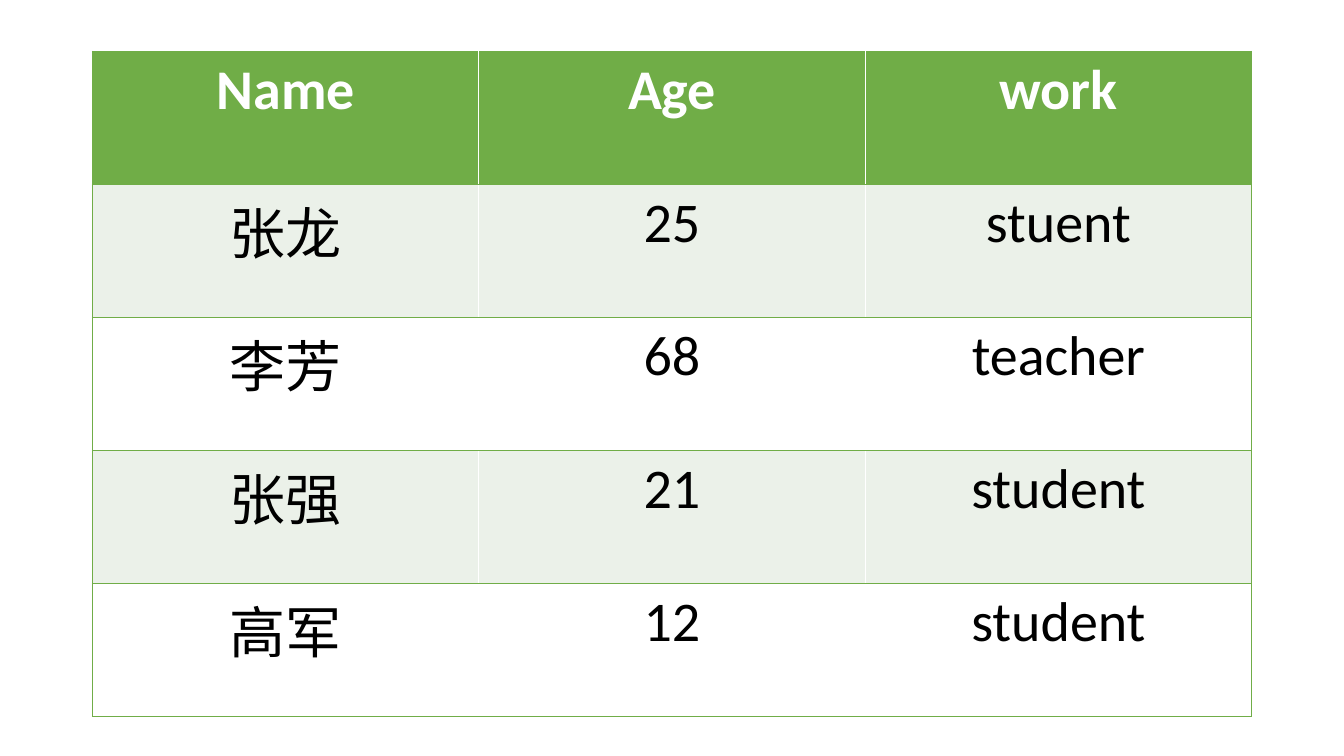
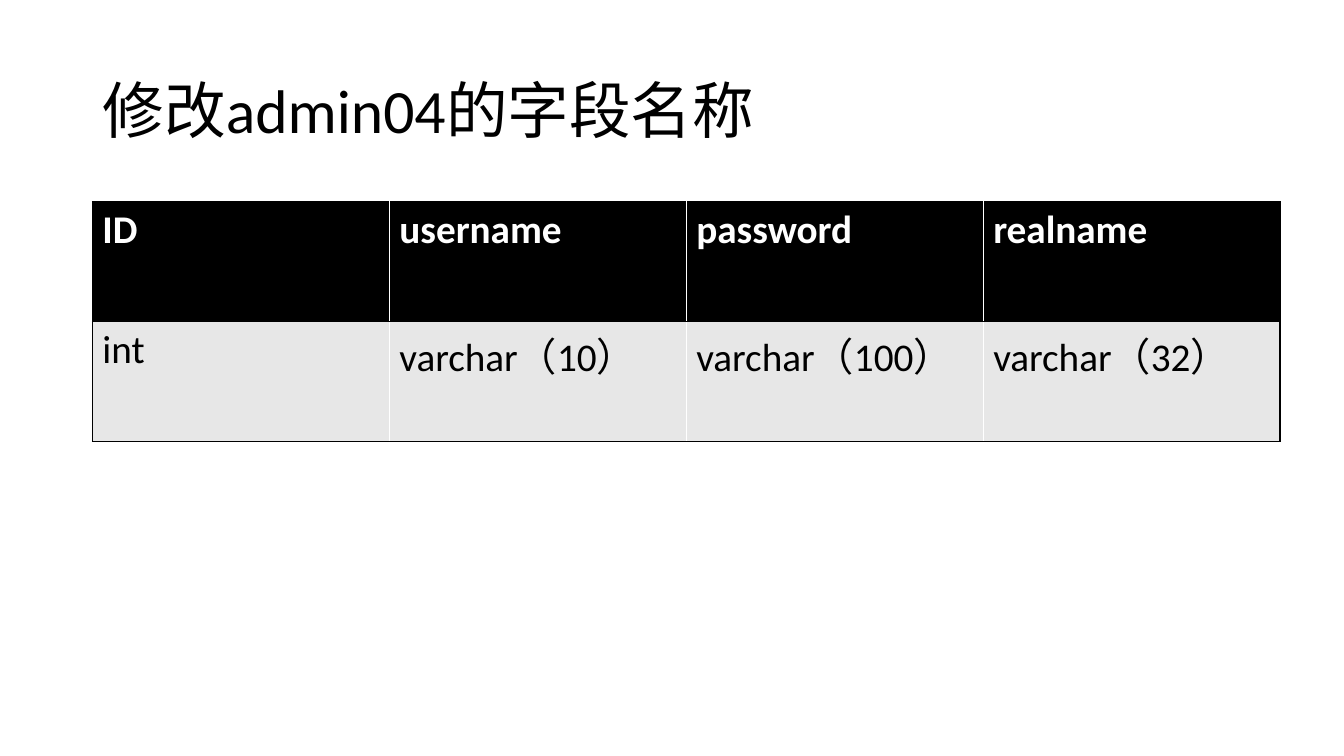
"""Build two slides: a table of people and a table of database fields."""
from lxml.etree import SubElement
from pptx import Presentation
from pptx.dml.color import RGBColor
from pptx.enum.text import MSO_ANCHOR, MSO_AUTO_SIZE, PP_ALIGN
from pptx.oxml.ns import qn
from pptx.util import Inches, Pt

GREEN = RGBColor(0x70, 0xAD, 0x47)
PALE_GREEN = RGBColor(0xEB, 0xF1, 0xE9)
BLACK = RGBColor(0x00, 0x00, 0x00)
GREY = RGBColor(0xE7, 0xE7, 0xE7)
WHITE = RGBColor(0xFF, 0xFF, 0xFF)
FONT = "Calibri"

presentation = Presentation()
presentation.slide_width = Inches(13.33)
presentation.slide_height = Inches(7.5)
COLUMN = presentation.slide_width / 160
ROW = presentation.slide_height / 75
LEFT = int(11 * COLUMN)
CONTENT_WIDTH = int(138 * COLUMN)


def format_text(paragraph, size, color, alignment, bold=False):
    paragraph.alignment = alignment
    for run in paragraph.runs:
        run.font.name = FONT
        run.font.size = Pt(size)
        run.font.bold = bold
        run.font.color.rgb = color


def add_grid(slide, records, top, width, row_height, size, alignment, accent, band):
    row_count, column_count = len(records), len(records[0])
    shape = slide.shapes.add_table(
        row_count, column_count, LEFT, int(top), int(width), int(row_height * row_count))
    for row_index, record in enumerate(records):
        is_header = row_index == 0
        fill_color = accent if is_header else band if row_index % 2 else WHITE
        for column_index, text in enumerate(record):
            cell = shape.table.cell(row_index, column_index)
            cell.text_frame.text = text
            format_text(cell.text_frame.paragraphs[0], size,
                        WHITE if is_header else BLACK, alignment, is_header)
            sides = ["a:lnT", "a:lnB"]
            if column_index == column_count - 1:
                sides.insert(0, "a:lnR")
            if column_index == 0:
                sides.insert(0, "a:lnL")
            properties = cell._tc.get_or_add_tcPr()
            for side in sides:
                line = SubElement(properties, qn(side), w=str(Pt(1)))
                line_fill = SubElement(line, qn("a:solidFill"))
                SubElement(line_fill, qn("a:srgbClr"), val=str(accent))
            cell.fill.solid()
            cell.fill.fore_color.rgb = fill_color


people = [
    ("Name", "Age", "work"),
    ("张龙", "25", "stuent"),
    ("李芳", "68", "teacher"),
    ("张强", "21", "student"),
    ("高军", "12", "student"),
]
people_slide = presentation.slides.add_slide(presentation.slide_layouts[6])
add_grid(people_slide, people, 5.1 * ROW, CONTENT_WIDTH, 13.2 * ROW,
         40, PP_ALIGN.CENTER, GREEN, PALE_GREEN)

fields = [
    ("ID", "username", "password", "realname"),
    ("int", "varchar（10）", "varchar（100）", "varchar（32）"),
]
fields_slide = presentation.slides.add_slide(presentation.slide_layouts[5])
title = fields_slide.shapes.title
title.left, title.top = LEFT, int(4 * ROW)
title.width, title.height = CONTENT_WIDTH, int(14.5 * ROW)
title.text_frame.text = "修改admin04的字段名称"
title.text_frame.auto_size = MSO_AUTO_SIZE.NONE
title.text_frame.vertical_anchor = MSO_ANCHOR.MIDDLE
title_paragraph = title.text_frame.paragraphs[0]
title_paragraph.line_spacing = 0.9
format_text(title_paragraph, 44, BLACK, PP_ALIGN.LEFT)
add_grid(fields_slide, fields, 20 * ROW, 141.4 * COLUMN, 11.9 * ROW,
         28, PP_ALIGN.LEFT, BLACK, GREY)

presentation.save("out.pptx")
